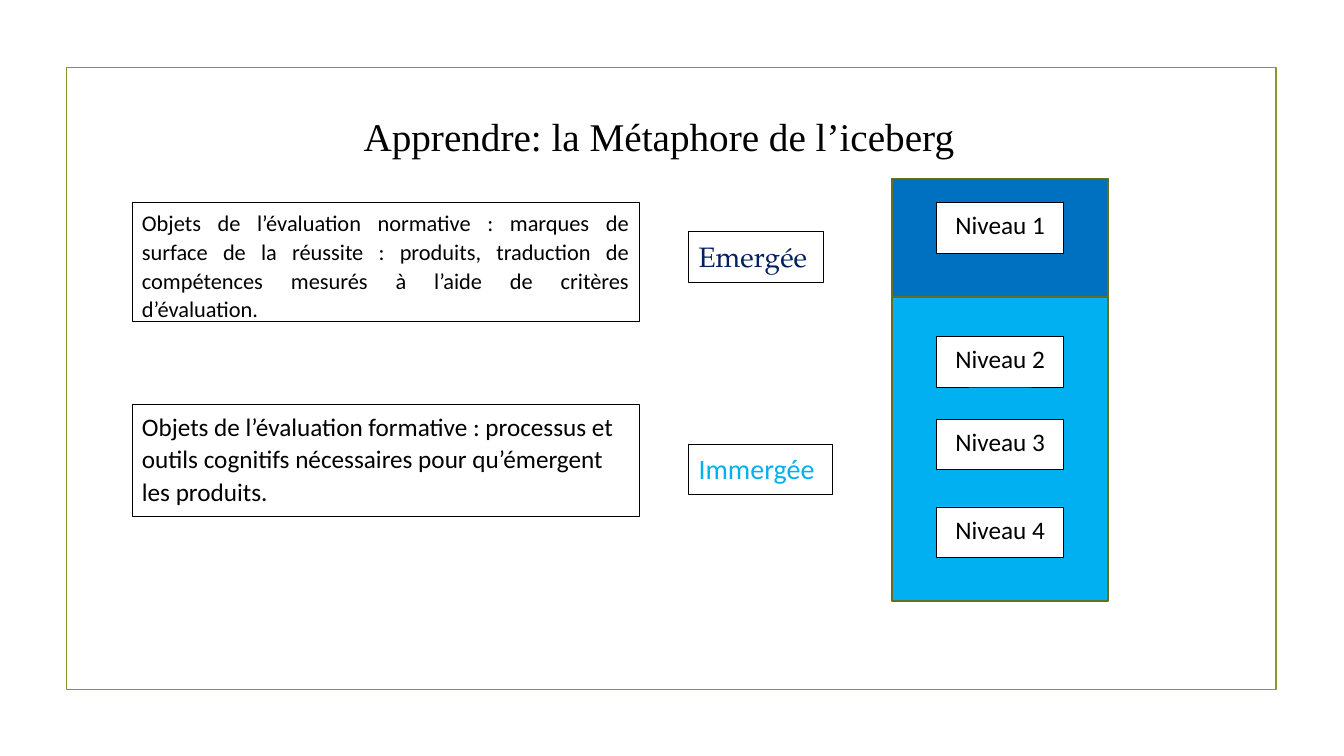
from pptx import Presentation
from pptx.dml.color import RGBColor
from pptx.enum.shapes import MSO_SHAPE
from pptx.enum.text import MSO_ANCHOR, PP_ALIGN
from pptx.util import Inches, Pt

RECTANGLE = MSO_SHAPE.RECTANGLE
TOP = MSO_ANCHOR.TOP
LEFT, CENTER, JUSTIFY = PP_ALIGN.LEFT, PP_ALIGN.CENTER, PP_ALIGN.JUSTIFY

presentation = Presentation()
presentation.slide_width = Inches(13.33)
presentation.slide_height = Inches(7.5)
slide = presentation.slides.add_slide(presentation.slide_layouts[6])

# Grid of 13.33 columns by 7.5 rows
COLUMN = presentation.slide_width / 13.33
ROW = presentation.slide_height / 7.5


def add_box(left, top, width, height, fill, line, weight):
    shape = slide.shapes.add_shape(
        RECTANGLE, round(left * COLUMN), round(top * ROW),
        round(width * COLUMN), round(height * ROW))
    shape.shadow.inherit = False
    if fill:
        shape.fill.solid()
        shape.fill.fore_color.rgb = RGBColor.from_string(fill)
    else:
        shape.fill.background()
    shape.line.color.rgb = RGBColor.from_string(line)
    shape.line.width = Pt(weight)
    return shape


def write(shape, text, size, font, color, alignment):
    frame = shape.text_frame
    frame.word_wrap = True
    frame.vertical_anchor = TOP
    paragraph = frame.paragraphs[0]
    paragraph.alignment = alignment
    run = paragraph.add_run()
    run.text = text
    run.font.size = Pt(size)
    run.font.name = font
    run.font.color.rgb = RGBColor.from_string(color)
    return paragraph


# Frame and title
add_box(0.66, 0.67, 12, 6.17, None, "83992A", 1.25)
title = slide.shapes.add_textbox(
    round(2.46 * COLUMN), round(1.07 * ROW), round(8.15 * COLUMN), round(0.57 * ROW))
write(title, "Apprendre: la Métaphore de l’iceberg", 28, "Times New Roman", "000000", CENTER)

# Iceberg: immersed part, then emerged part
for top, height, fill in [(2.93, 3.03, "00B0F0"), (1.77, 1.18, "0070C0")]:
    add_box(8.85, top, 2.14, height, fill, "61711F", 1.25)

# Labelled boxes: left, top, width, height, text, size, font, colour, alignment
labels = [
    (1.31, 2.01, 5.03, 1.18,
     "Objets de l’évaluation normative : marques de surface de la réussite : produits, "
     "traduction de compétences mesurés à l’aide de critères d’évaluation.",
     16, "Calibri", "000000", JUSTIFY),
    (1.31, 4.01, 5.03, 1.11,
     "Objets de l’évaluation formative : processus et outils cognitifs nécessaires "
     "pour qu’émergent les produits.",
     18, "Calibri", "000000", LEFT),
    (6.83, 2.3, 1.34, 0.5, "Emergée", 20, "TeX Gyre Pagella", "002060", LEFT),
    (6.83, 4.41, 1.43, 0.5, "Immergée", 20, "Calibri", "00B0F0", LEFT),
]
for level, top in enumerate([2.01, 3.34, 4.16, 5.03], start=1):
    labels.append((9.29, top, 1.26, 0.5, f"Niveau {level}", 18, "Calibri", "000000", CENTER))

for left, top, width, height, *text_style in labels:
    box = add_box(left, top, width, height, "FFFFFF", "000000", 0.5)
    paragraph = write(box, *text_style)
    paragraph.line_spacing = 1.07
    paragraph.space_after = Pt(8)

presentation.save("out.pptx")
